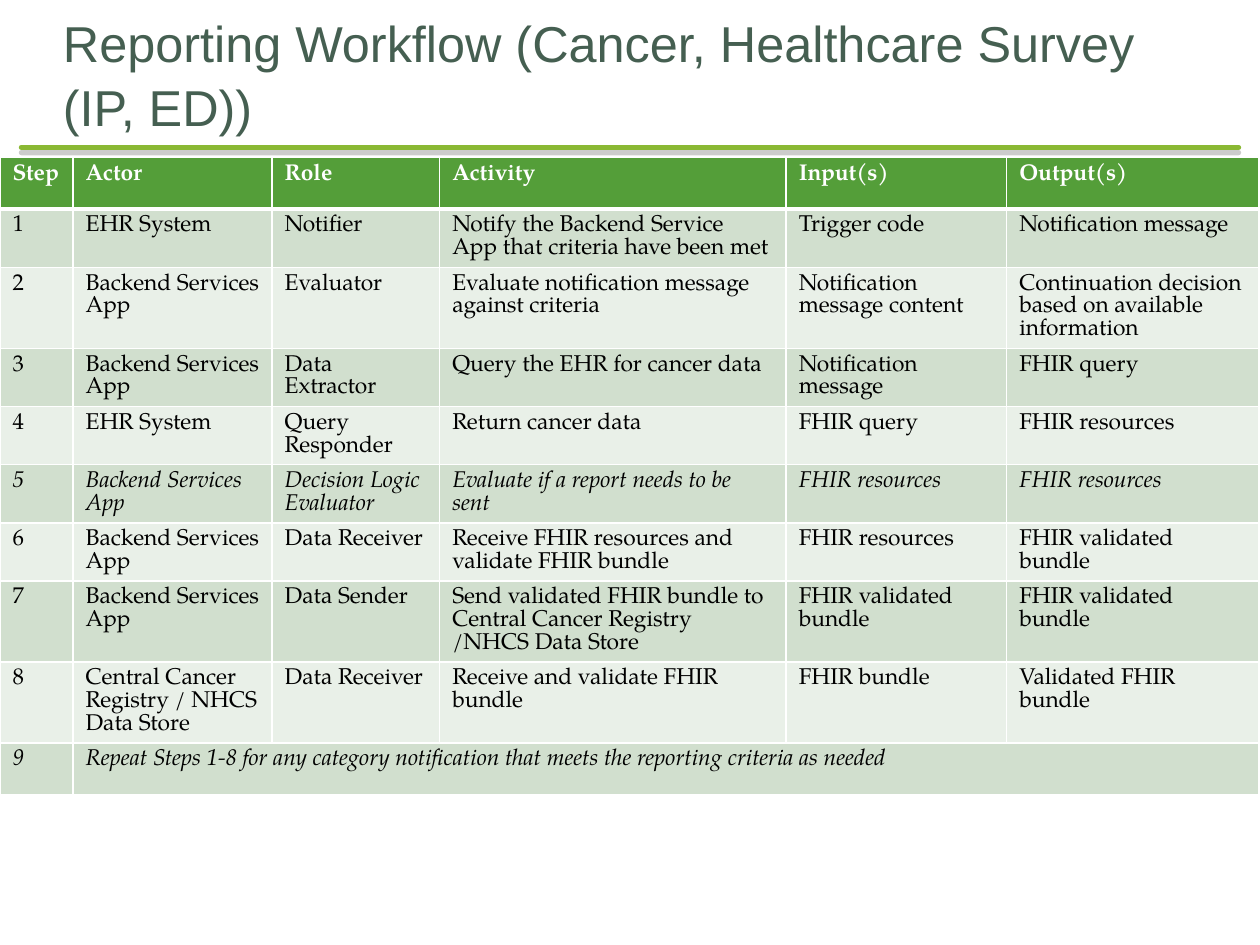
from lxml import etree
from pptx import Presentation
from pptx.dml.color import RGBColor
from pptx.enum.shapes import MSO_CONNECTOR
from pptx.enum.text import MSO_ANCHOR
from pptx.oxml import parse_xml
from pptx.oxml.ns import nsdecls, qn
from pptx.util import Inches, Pt

STRAIGHT = MSO_CONNECTOR.STRAIGHT
BOTTOM = MSO_ANCHOR.BOTTOM

TITLE = "Reporting Workflow (Cancer, Healthcare Survey (IP, ED))"
TITLE_FONT = {"name": "Arial", "size": Pt(28.8)}
TABLE_FONT = {"name": "TeX Gyre Pagella", "size": Pt(13)}
HEADER_FILL = "549E39"
BAND_FILLS = ("E9F0E8", "D1DFCE")
COLUMN_WIDTHS = (0.58, 1.58, 1.33, 2.75, 1.75, 2)
ROW_HEIGHT = 0.41
ITALIC_STEPS = (5, 9)
APP = "Backend Services App"

HEADINGS = ("Step", "Actor", "Role", "Activity", "Input(s)", "Output(s)")
STEPS = (
    ("EHR System", "Notifier",
     "Notify the Backend Service App that criteria have been met",
     "Trigger code", "Notification message"),
    (APP, "Evaluator", "Evaluate notification message against criteria",
     "Notification message content",
     "Continuation decision based on available information"),
    (APP, "Data Extractor", "Query the EHR for cancer data",
     "Notification message", "FHIR query"),
    ("EHR System", "Query Responder", "Return cancer data",
     "FHIR query", "FHIR resources"),
    (APP, "Decision Logic Evaluator", "Evaluate if a report needs to be sent",
     "FHIR resources", "FHIR resources"),
    (APP, "Data Receiver", "Receive FHIR resources and validate FHIR bundle",
     "FHIR resources", "FHIR validated bundle"),
    (APP, "Data Sender",
     "Send validated FHIR bundle to Central Cancer Registry /NHCS Data Store",
     "FHIR validated bundle", "FHIR validated bundle"),
    ("Central Cancer Registry / NHCS Data Store", "Data Receiver",
     "Receive and validate FHIR bundle", "FHIR bundle", "Validated FHIR bundle"),
    ("Repeat Steps 1-8 for any category notification that meets "
     "the reporting criteria as needed",),
)


def rgb(color):
    """Return the colour for a hex string."""
    return RGBColor.from_string(color)


def write(text_frame, text, color, line_spacing, formats):
    """Write one formatted paragraph into a text frame."""
    paragraph = text_frame.paragraphs[0]
    paragraph.line_spacing = line_spacing
    run = paragraph.add_run()
    run.text = text
    run.font.color.rgb = rgb(color)
    for attribute, value in formats.items():
        setattr(run.font, attribute, value)


def add_title(slide, left, top, width, height):
    """Place the title, growing upwards from the bottom of its box."""
    title = slide.shapes.add_textbox(
        Inches(left), Inches(top), Inches(width), Inches(height))
    frame_format = {
        "word_wrap": True, "vertical_anchor": BOTTOM, "margin_left": 0,
        "margin_right": 0, "margin_top": Inches(0.05), "margin_bottom": 0}
    for attribute, value in frame_format.items():
        setattr(title.text_frame, attribute, value)
    write(title.text_frame, TITLE, "455F51", 1.05, TITLE_FONT)


def add_rule(slide, left, top, width):
    """Draw the round-ended rule with its soft grey shadow."""
    rule = slide.shapes.add_connector(
        STRAIGHT, Inches(left), Inches(top), Inches(left + width), Inches(top))
    rule.line.color.rgb = rgb("8AB833")
    rule.line.width = Pt(3)
    properties = rule.line._get_or_add_ln()
    properties.set("cap", "rnd")
    etree.SubElement(properties, qn("a:round"))
    properties.getparent().append(parse_xml(
        f'<a:effectLst {nsdecls("a")}>'
        f'<a:outerShdw dist="{Pt(3)}" dir="5400000" algn="ctr" rotWithShape="0">'
        '<a:srgbClr val="808080"><a:alpha val="40000"/></a:srgbClr>'
        '</a:outerShdw></a:effectLst>'))


def style_cell(cell, fill, top_border, bottom_border):
    """Give a cell its white borders and its fill."""
    borders = {"lnL": 1, "lnR": 1, "lnT": top_border, "lnB": bottom_border}
    for side, points in borders.items():
        cell._tc.get_or_add_tcPr().append(parse_xml(
            f'<a:{side} {nsdecls("a")} w="{Pt(points)}"><a:solidFill>'
            f'<a:srgbClr val="FFFFFF"/></a:solidFill></a:{side}>'))
    cell.fill.solid()
    cell.fill.fore_color.rgb = rgb(fill)


def add_workflow(slide, left, top):
    """Build the workflow table with its header and banded steps."""
    rows = [HEADINGS] + [(str(n), *step) for n, step in enumerate(STEPS, 1)]
    table = slide.shapes.add_table(
        len(rows), len(COLUMN_WIDTHS), Inches(left), Inches(top),
        Inches(sum(COLUMN_WIDTHS)), Inches(ROW_HEIGHT * len(rows))).table
    for column, width in zip(table.columns, COLUMN_WIDTHS):
        column.width = Inches(width)
    for step, texts in enumerate(rows):
        is_header = step == 0
        fill = HEADER_FILL if is_header else BAND_FILLS[step % 2]
        formats = TABLE_FONT | {"bold": is_header, "italic": step in ITALIC_STEPS}
        for cell in table.rows[step].cells:
            style_cell(cell, fill, 3 if step == 1 else 1, 3 if is_header else 1)
        for column, text in enumerate(texts):
            write(table.cell(step, column).text_frame, text,
                  "FFFFFF" if is_header else "000000", Pt(13), formats)
    last = len(rows) - 1
    table.cell(last, 1).merge(table.cell(last, len(COLUMN_WIDTHS) - 1))


def main():
    """Build and save the reporting workflow slide."""
    presentation = Presentation()
    presentation.slide_width = Inches(10)
    presentation.slide_height = Inches(7.5)
    slide = presentation.slides.add_slide(presentation.slide_layouts[6])
    add_rule(slide, 0.17, 1.17, 9.66)
    add_title(slide, 0.5, 0.5, 9, 0.58)
    add_workflow(slide, 0, 1.25)
    presentation.save("out.pptx")


if __name__ == "__main__":
    main()
